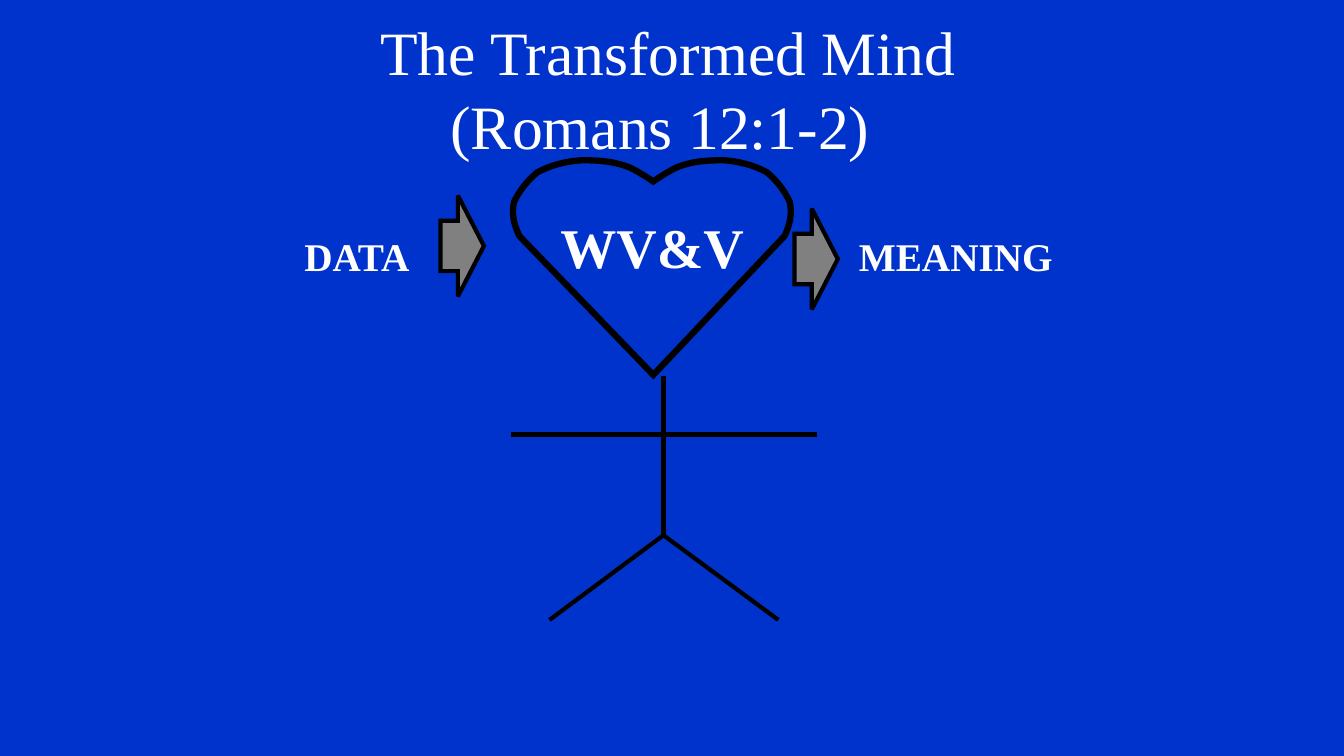
from pptx import Presentation
from pptx.dml.color import RGBColor
from pptx.enum.shapes import MSO_CONNECTOR as Connector, MSO_SHAPE as Shape
from pptx.enum.text import MSO_ANCHOR as Anchor, PP_ALIGN as Align
from pptx.oxml.ns import qn
from pptx.util import Inches, Pt
from lxml.etree import SubElement


def color(hex_value):
    return RGBColor.from_string(hex_value)


def bezier(start, first, second, end, steps=8):
    points = []
    for step in range(1, steps + 1):
        t = step / steps
        weights = ((1 - t) ** 3, 3 * t * (1 - t) ** 2, 3 * t * t * (1 - t), t ** 3)
        controls = (start, first, second, end)
        points.append(tuple(sum(w * c[axis] for w, c in zip(weights, controls))
                            for axis in (0, 1)))
    return points


class Sketch:
    font = "Times New Roman"
    ink = "000000"
    chalk = "FFFFFF"
    steel = "808080"

    def __init__(self, slide, background):
        self.slide = slide
        slide.background.fill.solid()
        slide.background.fill.fore_color.rgb = color(background)

    def text(self, lines, left, top, width, height, size, bold=True,
             align=Align.LEFT, anchor=Anchor.BOTTOM, wrap=False):
        box = self.slide.shapes.add_textbox(
            Inches(left), Inches(top), Inches(width), Inches(height))
        frame = box.text_frame
        frame.word_wrap = wrap
        frame.vertical_anchor = anchor
        paragraph = frame.paragraphs[0]
        paragraph.alignment = align
        for index, line in enumerate(lines):
            if index:
                paragraph.add_line_break()
            run = paragraph.add_run()
            run.text = line
            run.font.name = self.font
            run.font.size = Pt(size)
            run.font.bold = bold
            run.font.color.rgb = color(self.chalk)

    def outline(self, shape, weight):
        shape.shadow.inherit = False
        shape.line.color.rgb = color(self.ink)
        shape.line.width = Pt(weight)
        line_xml = shape.line._get_or_add_ln()
        SubElement(line_xml, qn("a:miter"), lim="800000")

    def limb(self, start, end):
        x1, y1, x2, y2 = (Inches(value) for value in start + end)
        limb = self.slide.shapes.add_connector(Connector.STRAIGHT, x1, y1, x2, y2)
        limb.line.color.rgb = color(self.ink)
        limb.line.width = Pt(3)
        SubElement(limb._element.spPr, qn("a:effectLst"))

    def arrow(self, left, top):
        arrow = self.slide.shapes.add_shape(
            Shape.RIGHT_ARROW, Inches(left), Inches(top), Inches(0.43), Inches(1))
        arrow.adjustments[0] = 0.5
        arrow.adjustments[1] = 0.6
        arrow.fill.solid()
        arrow.fill.fore_color.rgb = color(self.steel)
        self.outline(arrow, 3)

    def heart(self, notch, lobe_curves, tip):
        left_side = [notch]
        for curve in lobe_curves:
            left_side += bezier(left_side[-1], *curve)
        right_side = [(notch[0] + 0.98 * (notch[0] - x), y)
                      for x, y in reversed(left_side[1:])]
        builder = self.slide.shapes.build_freeform(
            Inches(notch[0]), Inches(notch[1]))
        builder.add_line_segments(
            [(Inches(x), Inches(y)) for x, y in left_side[1:] + [tip] + right_side],
            close=True)
        heart = builder.convert_to_shape()
        heart.fill.background()
        self.outline(heart, 4.5)


def main():
    deck = Presentation()
    deck.slide_width, deck.slide_height = Inches(13.33), Inches(7.5)
    sketch = Sketch(deck.slides.add_slide(deck.slide_layouts[6]), "0033CC")

    sketch.text(["The Transformed Mind", "(Romans 12:1-2) "], 2, 0, 9.25, 1.75, 44,
                bold=False, align=Align.CENTER, anchor=Anchor.MIDDLE, wrap=True)

    lobe_curves = [
        ((6.42, 1.76), (6.31, 1.69), (6.24, 1.66)),
        ((6.09, 1.6), (5.94, 1.59), (5.77, 1.59)),
        ((5.61, 1.6), (5.46, 1.64), (5.33, 1.71)),
        ((5.22, 1.8), (5.15, 1.9), (5.1, 2)),
        ((5.07, 2.12), (5.1, 2.23), (5.15, 2.34)),
    ]
    sketch.heart((6.48, 1.8), lobe_curves, (6.48, 3.72))

    neck, hip = (6.58, 3.73), (6.58, 5.31)
    left_foot, right_foot = (5.45, 6.15), (7.72, 6.15)
    left_hand, right_hand = (5.07, 4.31), (8.1, 4.31)
    for start, end in [(neck, hip), (hip, left_foot), (hip, right_foot),
                       (left_hand, right_hand)]:
        sketch.limb(start, end)

    sketch.arrow(4.37, 1.94)
    sketch.arrow(7.88, 2.07)

    sketch.text(["DATA"], 2.92, 2.25, 1.3, 0.57, 28)
    sketch.text(["MEANING"], 8.42, 2.25, 2.12, 0.57, 28)
    sketch.text(["WV&V"], 5.46, 2.05, 2.42, 0.77, 40, wrap=True)

    deck.save("out.pptx")


if __name__ == "__main__":
    main()
